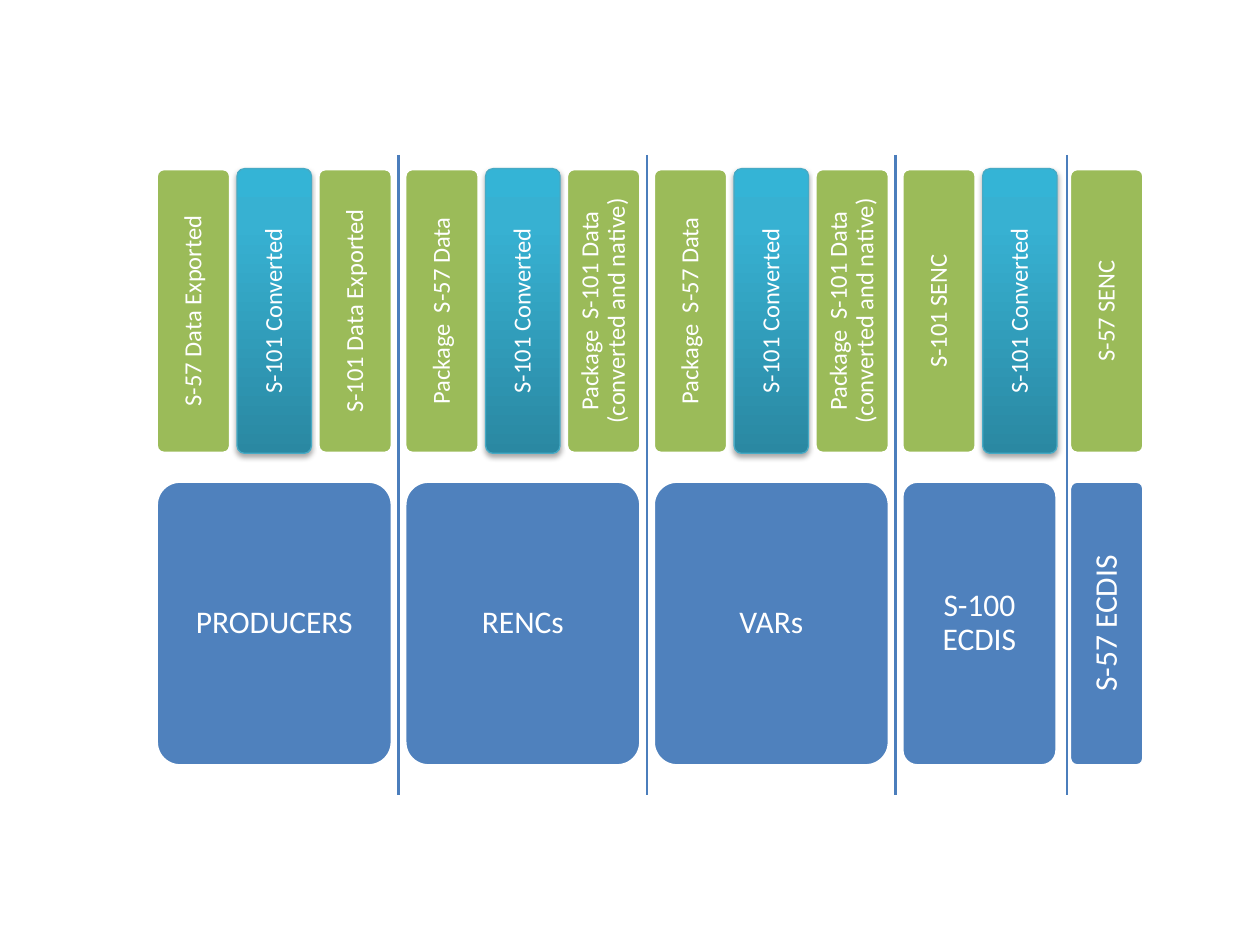
from copy import deepcopy
from dataclasses import dataclass

from lxml.etree import SubElement
from pptx import Presentation
from pptx.dml.color import RGBColor
from pptx.enum.shapes import MSO_CONNECTOR, MSO_SHAPE
from pptx.enum.text import MSO_ANCHOR, PP_ALIGN
from pptx.oxml.ns import qn
from pptx.util import Cm, Pt

# Layout, in centimetres
LEFT, BAR_W, BAR_GAP, GROUP_GAP = 3.15, 1.5, 0.13, 0.25
BAR_TOP, STAGE_TOP, BOX_H = 3.4, 9.7, 5.74
LINE_TOP, LINE_BOTTOM = 3.12, 16.03

WHITE, GREEN, BLUE, DIVIDER = "FFFFFF", "9BBB59", "4F81BD", "4B7EBC"
TEAL_LINE = "46AAC5"
TEAL_STOPS = [(0, "2A88A2"), (0.8, "37B1D2"), (1, "34B4D6")]
CONVERTED = "S-101 Converted"
PACKAGE_S57 = "Package  S-57 Data"
PACKAGE_S101 = "Package  S-101 Data (converted and native)"


@dataclass
class Stage:
    name: str
    bars: list[str]
    divider_gap: float = GROUP_GAP / 2  # from the divider to the stage

    @property
    def width(self) -> float:
        n = len(self.bars)
        return n * BAR_W + (n - 1) * BAR_GAP


STAGES = [
    Stage("PRODUCERS", ["S-57 Data Exported", CONVERTED, "S-101 Data Exported"]),
    Stage("RENCs", [PACKAGE_S57, CONVERTED, PACKAGE_S101]),
    Stage("VARs", [PACKAGE_S57, CONVERTED, PACKAGE_S101]),
    Stage("S-100 ECDIS", ["S-101 SENC", CONVERTED]),
    Stage("S-57 ECDIS", ["S-57 SENC"], divider_gap=0.05),
]


def rgb(color: str) -> RGBColor:
    return RGBColor.from_string(color)


def write_text(sp, text: str, *, size: float, inset: float, vertical: bool) -> None:
    tf = sp.text_frame
    tf.word_wrap = True
    tf.vertical_anchor = MSO_ANCHOR.MIDDLE
    tf.margin_left = tf.margin_right = tf.margin_top = tf.margin_bottom = Cm(inset)
    if vertical:
        tf._txBody.bodyPr.set("vert", "vert270")
    p = tf.paragraphs[0]
    p.alignment = PP_ALIGN.CENTER
    p.line_spacing = 0.9
    r = p.add_run()
    r.text = text
    r.font.name = "Calibri"
    r.font.size = Pt(size)
    r.font.color.rgb = rgb(WHITE)


def add_box(s, x: float, y: float, w: float, fill: str):
    sp = s.shapes.add_shape(MSO_SHAPE.ROUNDED_RECTANGLE, Cm(x), Cm(y), Cm(w), Cm(BOX_H))
    sp.adjustments[0] = 0.1
    sp.shadow.inherit = False
    sp.fill.solid()
    sp.fill.fore_color.rgb = rgb(fill)
    sp.line.color.rgb = rgb(WHITE)
    sp.line.width = Pt(2)
    return sp


def style_converted(sp) -> None:
    """Teal gradient, thin outline and a soft shadow below."""
    fill = sp.fill
    fill.gradient()
    fill.gradient_angle = 90
    stops = sp._element.spPr.find(".//" + qn("a:gsLst"))
    stops.append(deepcopy(stops[-1]))
    for stop, (position, color) in zip(fill.gradient_stops, TEAL_STOPS):
        stop.position = position
        stop.color.rgb = rgb(color)
    sp.line.color.rgb = rgb(TEAL_LINE)
    sp.line.width = Pt(0.75)
    effects = sp._element.spPr.find(qn("a:effectLst"))
    shadow = SubElement(effects, qn("a:outerShdw"), blurRad="40000", dist="23000",
                        dir="5400000", rotWithShape="0")
    color = SubElement(shadow, qn("a:srgbClr"), val="000000")
    SubElement(color, qn("a:alpha"), val="35000")


def add_divider(s, x: float) -> None:
    line = s.shapes.add_connector(MSO_CONNECTOR.STRAIGHT, Cm(x), Cm(LINE_TOP),
                                  Cm(x), Cm(LINE_BOTTOM))
    line.line.color.rgb = rgb(DIVIDER)
    line.line.width = Pt(1.5)
    SubElement(line._element.spPr, qn("a:effectLst"))


def add_stage(s, stage: Stage, x: float) -> None:
    sp = add_box(s, x, STAGE_TOP, stage.width, BLUE)
    write_text(sp, stage.name, size=18, inset=0.18, vertical=len(stage.bars) == 1)
    for i, label in enumerate(stage.bars):
        sp = add_box(s, x + i * (BAR_W + BAR_GAP), BAR_TOP, BAR_W, GREEN)
        if label == CONVERTED:
            style_converted(sp)
        write_text(sp, label, size=14, inset=0.14, vertical=True)


def main() -> None:
    prs = Presentation()
    prs.slide_width, prs.slide_height = Cm(25.4), Cm(19.05)
    s = prs.slides.add_slide(prs.slide_layouts[6])

    # Stages from left to right, with a divider before all but the first
    x = LEFT
    for i, stage in enumerate(STAGES):
        add_stage(s, stage, x)
        if i:
            add_divider(s, x - stage.divider_gap)
        x += stage.width + GROUP_GAP

    prs.save("out.pptx")


if __name__ == "__main__":
    main()
